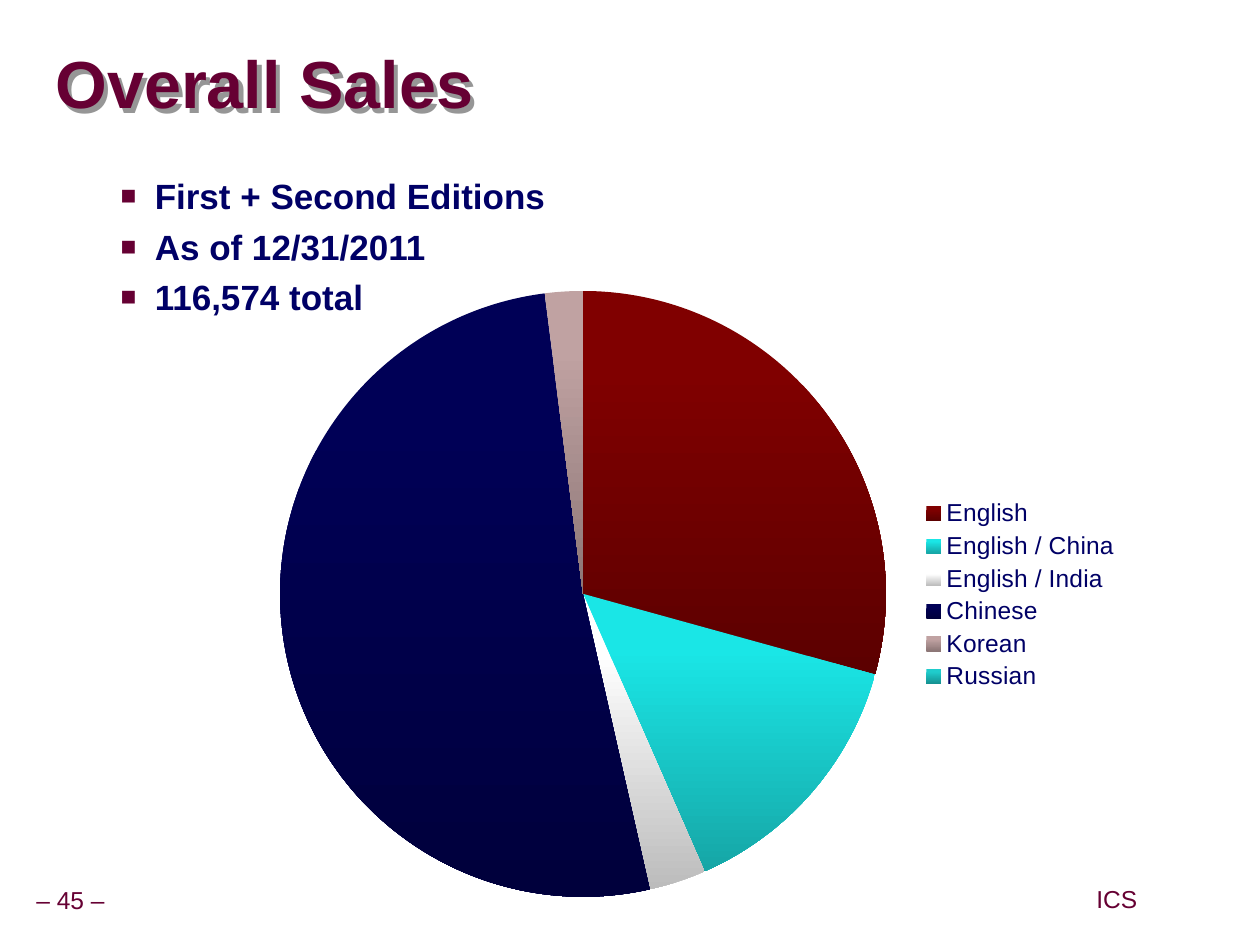
"""Build the overall sales slide: title, key facts and a pie chart by edition."""
from dataclasses import dataclass
from lxml.etree import SubElement
from pptx import Presentation
from pptx.chart.data import CategoryChartData
from pptx.dml.color import RGBColor as Rgb
from pptx.enum.chart import XL_CHART_TYPE as Kind, XL_LEGEND_POSITION as Side
from pptx.enum.text import MSO_ANCHOR as Anchor, PP_ALIGN as Align
from pptx.oxml import parse_xml
from pptx.oxml.ns import nsdecls, qn
from pptx.util import Inches, Pt

TITLE = "Overall Sales"
FACTS = ["First + Second Editions", "As of 12/31/2011", "116,574 total"]
FOOT = [("– 45 –", (0.023, 0.933, 0.066, 0.041)), ("ICS", (0.865, 0.932, 0.043, 0.041))]
SALES = [
    ("English", 29, "800000", "5C0000"),
    ("English / China", 14, "1AE6E6", "16A6A6"),
    ("English / India", 3, "FFFFFF", "BCBCBC"),
    ("Chinese", 51, "000056", "00003C"),
    ("Korean", 2, "C0A2A2", "8C7676"),
    ("Russian", 0, "1FCCCC", "159292"),
]
AREAS = {
    "title": (0.044, 0.036, 0.953, 0.113),
    "facts": (0.032, 0.178, 0.909, 0.2),
    "chart": (0.197, 0.291, 0.702, 0.677),
}
PLOT = {"x": 0.036, "y": 0.025, "w": 0.685, "h": 0.947}


@dataclass(frozen=True)
class Theme:
    font: str = "Arial"
    wine: str = "660033"
    navy: str = "000066"
    shade: str = "969696"
    head: int = 38
    body: int = 20
    small: int = 14
    tiny: int = 10


LOOK = Theme()
WIDE, HIGH = Inches(10), Inches(7.5)


def place(area):
    return [int(part * side) for part, side in zip(area, (WIDE, HIGH) * 2)]


def style(font, size, color, bold=False):
    for key, val in {"name": LOOK.font, "size": Pt(size), "bold": bold}.items():
        setattr(font, key, val)
    font.color.rgb = Rgb.from_string(color)


def set_frame(frame, **opts):
    for key, val in opts.items():
        setattr(frame, key, val)


def margins(side, top):
    return {"margin_left": Inches(side), "margin_right": Inches(side),
            "margin_top": Inches(top), "margin_bottom": Inches(top)}


def add_title(slide):
    title = slide.shapes.title
    title.left, title.top, title.width, title.height = place(AREAS["title"])
    title.fill.background()
    set_frame(title.text_frame, vertical_anchor=Anchor.MIDDLE, word_wrap=True, **margins(0, 0))
    para = title.text_frame.paragraphs[0]
    para.alignment, para.line_spacing = Align.LEFT, 0.87
    run = para.add_run()
    run.text = TITLE
    style(run.font, LOOK.head, LOOK.wine, True)
    title._element.spPr.append(parse_xml(
        f'<a:effectLst {nsdecls("a")}><a:outerShdw dist="{Inches(0.05)}" dir="3000000" algn="ctr">'
        f'<a:srgbClr val="{LOOK.shade}"/></a:outerShdw></a:effectLst>'))


def add_facts(slide):
    frame = slide.shapes.add_textbox(*place(AREAS["facts"])).text_frame
    set_frame(frame, word_wrap=True, **margins(0.1, 0.05))
    for num, fact in enumerate(FACTS):
        para = frame.paragraphs[0] if num == 0 else frame.add_paragraph()
        para.space_before = Pt(5 if num else 0)
        run = para.add_run()
        run.text = fact
        style(run.font, LOOK.body, LOOK.navy, True)
        props = para._p.get_or_add_pPr()
        props.set("marL", str(Inches(0.81)))
        props.set("indent", str(Inches(-0.27)))
        color = SubElement(props, qn("a:buClr"))
        SubElement(color, qn("a:srgbClr"), val=LOOK.wine)
        SubElement(props, qn("a:buSzPct"), val="75000")
        SubElement(props, qn("a:buFont"), typeface=LOOK.font)
        SubElement(props, qn("a:buChar"), char="■")


def add_foot(slide):
    for text, area in FOOT:
        frame = slide.shapes.add_textbox(*place(area)).text_frame
        set_frame(frame, word_wrap=False, vertical_anchor=Anchor.MIDDLE, **margins(0.05, 0.05))
        para = frame.paragraphs[0]
        para.alignment, para.line_spacing = Align.CENTER, 0.9
        run = para.add_run()
        run.text = text
        style(run.font, LOOK.small, LOOK.wine)


def add_pie(slide):
    data = CategoryChartData()
    data.categories = [row[0] for row in SALES]
    data.add_series("Series 1", [row[1] for row in SALES])
    chart = slide.shapes.add_chart(Kind.PIE, *place(AREAS["chart"]), data).chart
    style(chart.font, LOOK.tiny, LOOK.navy)
    chart.has_title, chart.has_legend = False, True
    chart.legend.position, chart.legend.include_in_layout = Side.RIGHT, False
    style(chart.legend.font, LOOK.small, LOOK.navy)
    plot = chart.plots[0]
    plot.vary_by_categories = True
    for num, (_, _, light, dark) in enumerate(SALES):
        form = plot.series[0].points[num].format
        form.line.fill.background()
        form.fill.gradient()
        form.fill.gradient_angle = 270
        for stop, spot, color in zip(form.fill.gradient_stops, (0.2, 1), (light, dark)):
            stop.position, stop.color.rgb = spot, Rgb.from_string(color)
    area = chart._chartSpace.chart.plotArea
    for old in area.findall(qn("c:layout")):
        area.remove(old)
    parts = "".join(f'<c:{key} val="{val}"/>' for key, val in PLOT.items())
    area.insert(0, parse_xml(
        f'<c:layout {nsdecls("c")}><c:manualLayout><c:layoutTarget val="inner"/>'
        f'<c:xMode val="edge"/><c:yMode val="edge"/>{parts}</c:manualLayout></c:layout>'))


def main():
    deck = Presentation()
    deck.slide_width, deck.slide_height = WIDE, HIGH
    slide = deck.slides.add_slide(deck.slide_layouts[5])
    for build in (add_foot, add_title, add_facts, add_pie):
        build(slide)
    deck.save("out.pptx")


if __name__ == "__main__":
    main()
